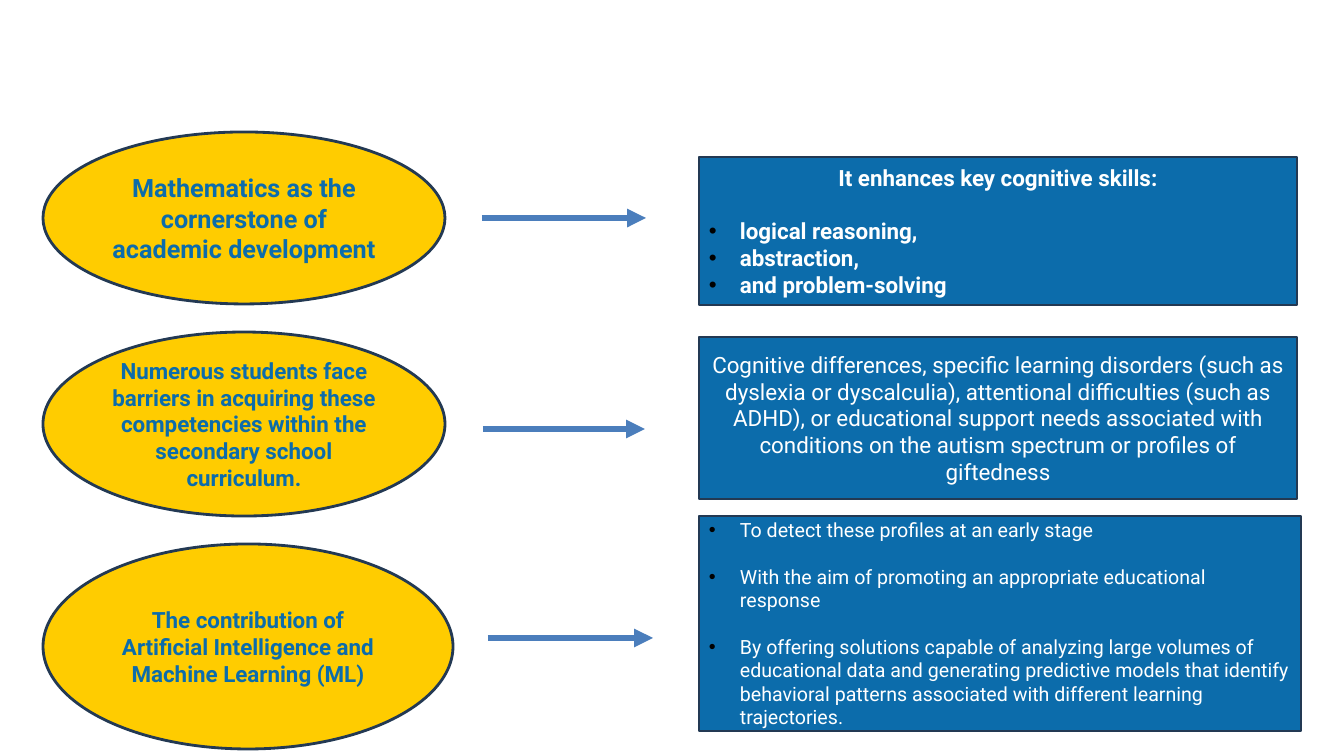
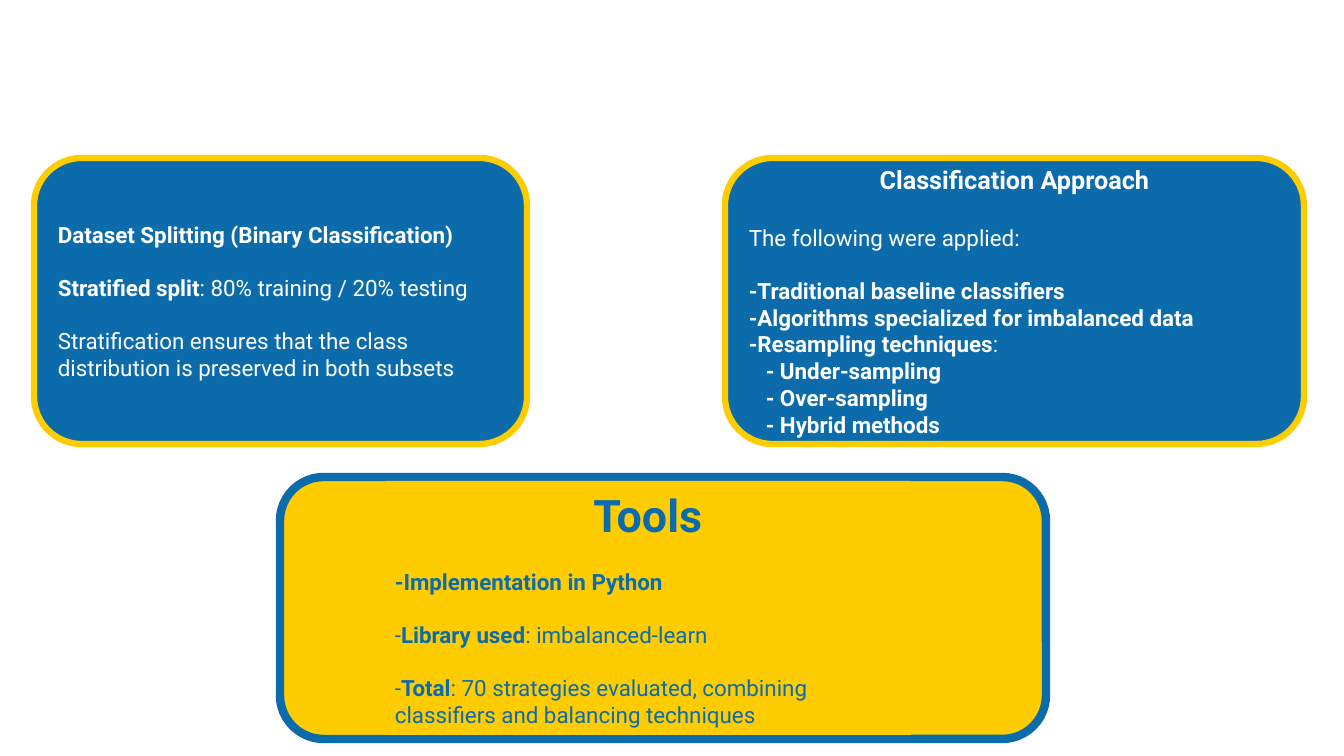
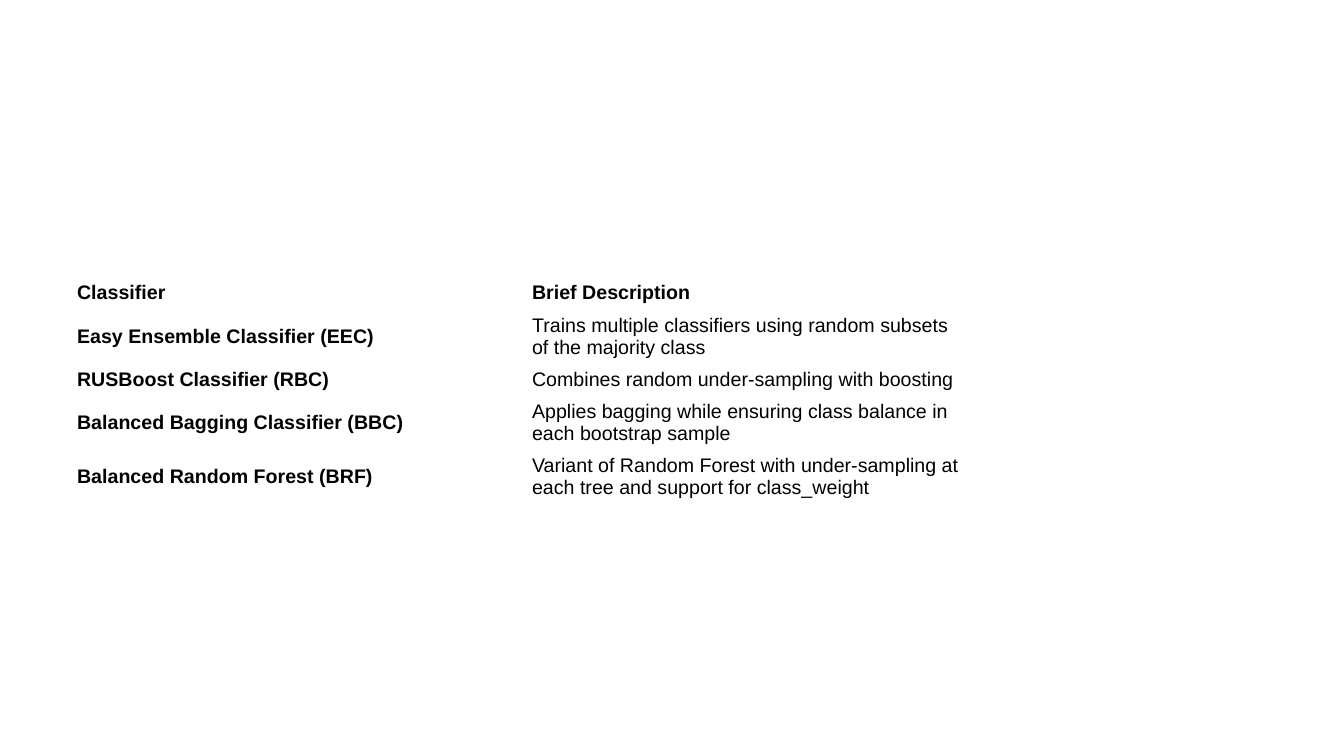
from dataclasses import dataclass

from lxml.etree import SubElement
from pptx import Presentation
from pptx.dml.color import RGBColor
from pptx.enum.shapes import MSO_CONNECTOR, MSO_SHAPE
from pptx.enum.text import MSO_ANCHOR, PP_ALIGN
from pptx.oxml.ns import qn
from pptx.util import Emu, Pt

PX = 914400 / 100.8
BLUE = RGBColor(0x0C, 0x6C, 0xAB)
YELLOW = RGBColor(0xFF, 0xCC, 0x00)
NAVY = RGBColor(0x23, 0x39, 0x53)
ARROW_BLUE = RGBColor(0x4B, 0x7E, 0xBC)
WHITE = RGBColor(0xFF, 0xFF, 0xFF)
BLACK = RGBColor(0x00, 0x00, 0x00)
LINE_HEIGHT = 1.17


@dataclass
class Line:
    text: str
    size: int = 16
    centred: bool = False
    bullet: bool = False
    indent: int = 0
    gap: int = 0


def px(length):
    return Emu(round(length * PX))


def add_bullet(para):
    properties = para._p.get_or_add_pPr()
    properties.set("marL", str(px(31)))
    properties.set("indent", str(px(-31)))
    colour = SubElement(properties, qn("a:buClr"))
    SubElement(colour, qn("a:srgbClr"), val=str(BLACK))
    SubElement(properties, qn("a:buFont"), typeface="Arial")
    SubElement(properties, qn("a:buChar"), char="•")


def write_line(para, line, colour, font="Roboto"):
    para.alignment = PP_ALIGN.CENTER if line.centred else PP_ALIGN.LEFT
    if line.gap:
        para.space_before = Pt(round(line.gap * LINE_HEIGHT, 2))
    if line.bullet:
        add_bullet(para)
    elif line.indent:
        para._p.get_or_add_pPr().set("marL", str(px(line.indent)))
    para.font.name = font
    para.font.size = Pt(line.size)
    para.font.color.rgb = colour
    pieces = [(text, index % 2 == 1)
              for index, text in enumerate(line.text.split("**")) if text]
    uniform = len(pieces) == 1
    if uniform:
        para.font.bold = pieces[0][1]
    for text, bold in pieces:
        span = para.add_run()
        span.text = text
        if not uniform:
            span.font.bold = bold


def add_panel(page, kind, box, fill, colour, lines=(), border=None, width=2):
    panel = page.shapes.add_shape(kind, *map(px, box))
    panel.shadow.inherit = False
    panel.fill.solid()
    panel.fill.fore_color.rgb = fill
    if border is None:
        panel.line.fill.background()
    else:
        panel.line.color.rgb = border
        panel.line.width = Pt(width)
    frame = panel.text_frame
    frame.word_wrap = True
    frame.vertical_anchor = MSO_ANCHOR.MIDDLE
    for index, line in enumerate(lines):
        para = frame.add_paragraph() if index else frame.paragraphs[0]
        write_line(para, line, colour)


def add_arrow(page, left, top, length):
    arrow = page.shapes.add_connector(
        MSO_CONNECTOR.STRAIGHT, px(left), px(top), px(left + length), px(top))
    arrow.line.color.rgb = ARROW_BLUE
    arrow.line.width = Pt(4.5)
    SubElement(arrow.line._get_or_add_ln(), qn("a:tailEnd"), type="triangle")
    SubElement(arrow._element.spPr, qn("a:effectLst"))


def add_idea_row(page, left, top, oval, arrow, detail, idea, lines):
    add_panel(page, MSO_SHAPE.OVAL, (left, top, *oval), YELLOW, BLUE,
              [idea], NAVY)
    arrow_x, arrow_y, length = arrow
    add_arrow(page, left + arrow_x, top + arrow_y, length)
    offset, width, height = detail
    add_panel(page, MSO_SHAPE.RECTANGLE,
              (left + 656, top + offset, width, height), BLUE, WHITE,
              lines, NAVY)


def build_motivation(page):
    add_idea_row(
        page, 43, 132, (402, 172), (439, 86, 164), (25, 598, 148),
        Line("**Mathematics as the cornerstone of academic development**", 18, True),
        [Line("**It enhances key cognitive skills:**", centred=True),
         Line("**logical reasoning,**", bullet=True, gap=16),
         Line("**abstraction,**", bullet=True),
         Line("**and problem-solving**", bullet=True)])
    add_idea_row(
        page, 43, 332, (402, 184), (440, 97, 162), (5, 598, 162),
        Line("**Numerous students face barriers in acquiring these competencies "
             "within the secondary school curriculum.**", centred=True),
        [Line("Cognitive differences, specific learning disorders (such as dyslexia "
              "or dyscalculia), attentional difficulties (such as ADHD), or "
              "educational support needs associated with conditions on the autism "
              "spectrum or profiles of giftedness", centred=True)])
    add_idea_row(
        page, 43, 544, (410, 205), (445, 94, 165), (-28, 602, 215),
        Line("**The contribution of Artificial Intelligence and Machine Learning "
             "(ML)**", centred=True),
        [Line("To detect these profiles at an early stage", 14, bullet=True),
         Line("With the aim of promoting an appropriate educational response",
              14, bullet=True, gap=14),
         Line("By offering solutions capable of analyzing large volumes of "
              "educational data and generating predictive models that identify "
              "behavioral patterns associated with different learning "
              "trajectories.", 14, bullet=True, gap=14)])


def add_tools(page, left, top, width, height):
    add_panel(page, MSO_SHAPE.ROUNDED_RECTANGLE, (left, top, width, height),
              YELLOW, BLUE, border=BLUE, width=6)
    add_panel(page, MSO_SHAPE.RECTANGLE, (left + 105, top + 4, 526, height - 8),
              YELLOW, BLUE,
              [Line("**Tools**", 32, True),
               Line("**-Implementation in Python**", gap=16),
               Line("-**Library used**: imbalanced-learn", gap=16),
               Line("-**Total**: 70 strategies evaluated, combining classifiers "
                    "and balancing techniques", gap=16)])


def build_method(page):
    add_panel(page, MSO_SHAPE.ROUNDED_RECTANGLE, (34, 158, 493, 286), BLUE, WHITE,
              [Line("**Dataset Splitting (Binary Classification)**"),
               Line("**Stratified split**: 80% training / 20% testing", gap=16),
               Line("Stratification ensures that the class distribution is "
                    "preserved in both subsets", gap=16)], YELLOW, 4.5)
    methods = [Line(f"**- {name}**", indent=17)
               for name in ("Under-sampling", "Over-sampling", "Hybrid methods")]
    add_panel(page, MSO_SHAPE.ROUNDED_RECTANGLE, (725, 158, 579, 286), BLUE, WHITE,
              [Line("**Classification Approach**", 18, True),
               Line("The following were applied:", gap=18),
               Line("**-Traditional baseline classifiers**", gap=16),
               Line("**-Algorithms specialized for imbalanced data**"),
               Line("**-Resampling techniques**:"),
               *methods], YELLOW, 4.5)
    add_tools(page, 280, 477, 766, 262)


def add_classifier_table(page, left, top, column_width, rows, heights):
    table = page.shapes.add_table(
        len(rows), 2, px(left), px(top), px(2 * column_width),
        px(sum(heights))).table
    table.first_row = False
    table.horz_banding = False
    for column in table.columns:
        column.width = px(column_width)
    for row, texts, height in zip(table.rows, rows, heights):
        row.height = px(height)
        for cell, text in zip(row.cells, texts):
            cell.fill.background()
            cell.vertical_anchor = MSO_ANCHOR.MIDDLE
            write_line(cell.text_frame.paragraphs[0], Line(text, 14), BLACK, "Arial")


def build_classifiers(page):
    rows = [
        ("**Classifier**", "**Brief Description**"),
        ("**Easy Ensemble Classifier (EEC)**",
         "Trains multiple classifiers using random subsets of the majority class"),
        ("**RUSBoost Classifier (RBC)**",
         "Combines random under-sampling with boosting"),
        ("**Balanced Bagging Classifier (BBC)**",
         "Applies bagging while ensuring class balance in each bootstrap sample"),
        ("**Balanced Random Forest (BRF)**",
         "Variant of Random Forest with under-sampling at each tree and support "
         "for class_weight"),
    ]
    add_classifier_table(page, 67, 277, 455, rows, (32, 54, 32, 54, 54))


def main():
    deck = Presentation()
    deck.slide_width = px(1344)
    deck.slide_height = px(756)
    for build in (build_motivation, build_method, build_classifiers):
        build(deck.slides.add_slide(deck.slide_layouts[6]))
    deck.save("out.pptx")


if __name__ == "__main__":
    main()
